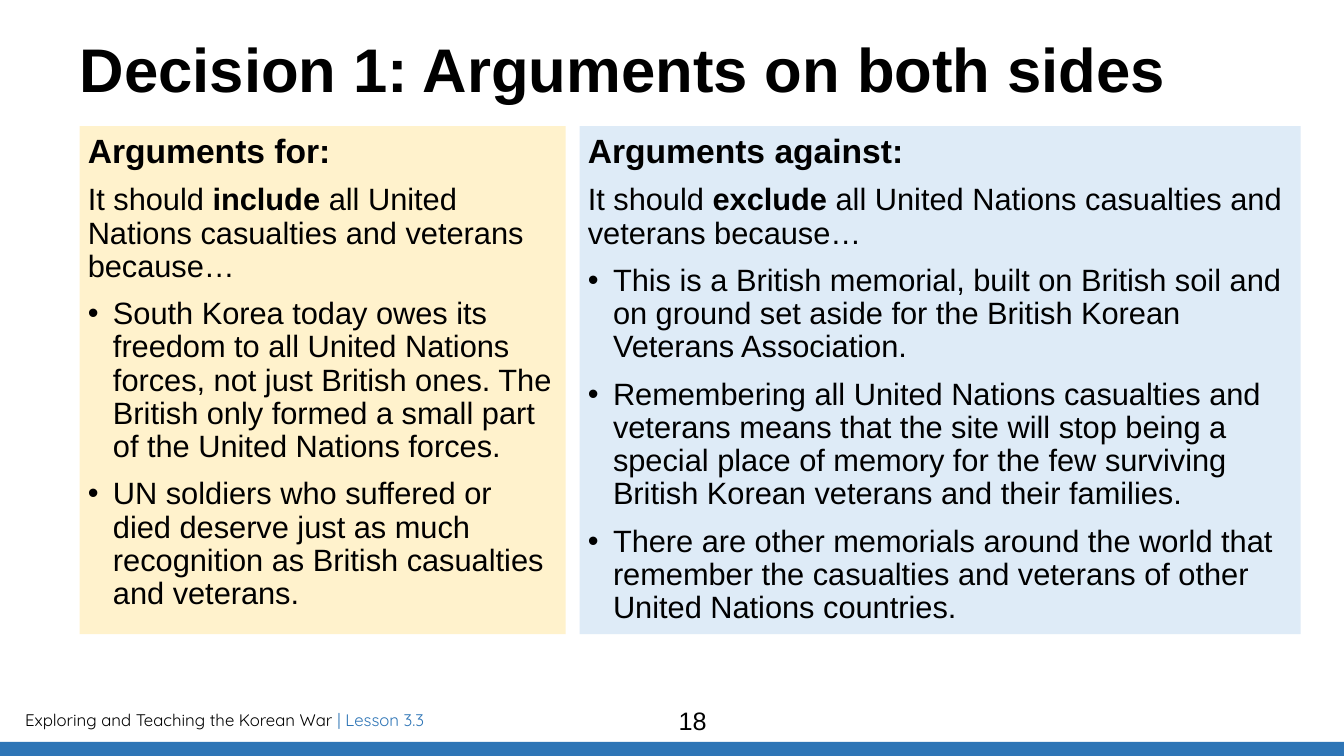
import pptx
import pptx.util
import pptx.dml.color
import pptx.enum.shapes
import pptx.enum.text
import lxml.etree
import pptx.oxml.ns

RGBColor = pptx.dml.color.RGBColor
BLACK = RGBColor(0x00, 0x00, 0x00)
BLUE = RGBColor(0x2E, 0x75, 0xB6)
CREAM = RGBColor(0xFF, 0xF2, 0xCC)
PALE_BLUE = RGBColor(0xDE, 0xEB, 0xF7)

LEFT, TOP = 5.93, 16.67
FOR_WIDTH, AGAINST_WIDTH, PANEL_HEIGHT = 36.16, 53.64, 67.2
GUTTER = 1.05


class ArgumentSlide:
    font = "Arial"
    footer_font = "Quicksand"
    heading_size, body_size = 24, 22
    inset, indent = 0.08, 0.25

    def __init__(self, deck):
        self.deck = deck
        self.slide = deck.slides.add_slide(deck.slide_layouts[5])

    def place(self, left, top, width, height):
        across, down = self.deck.slide_width / 100, self.deck.slide_height / 100
        return [round(n) for n in (left * across, top * down, width * across, height * down)]

    def style(self, run, size, color=BLACK, bold=False, font=None):
        run.font.name = font or self.font
        run.font.size = pptx.util.Pt(size)
        run.font.color.rgb = color
        run.font.bold = bold

    def title(self, text, *box):
        heading = self.slide.shapes.title
        heading.left, heading.top, heading.width, heading.height = self.place(*box)
        frame = heading.text_frame
        frame.text = text
        frame.margin_left = frame.margin_right = frame.margin_top = frame.margin_bottom = 0
        frame.vertical_anchor = pptx.enum.text.MSO_ANCHOR.TOP
        frame.auto_size = pptx.enum.text.MSO_AUTO_SIZE.NONE
        frame.word_wrap = True
        paragraph = frame.paragraphs[0]
        paragraph.alignment = pptx.enum.text.PP_ALIGN.LEFT
        paragraph.line_spacing = 0.9
        self.style(paragraph.runs[0], 44, bold=True)

    def block(self, fill, *box):
        block = self.slide.shapes.add_shape(
            pptx.enum.shapes.MSO_SHAPE.RECTANGLE, *self.place(*box))
        block.shadow.inherit = False
        block.fill.solid()
        block.fill.fore_color.rgb = fill
        block.line.fill.background()
        return block

    def fill_paragraph(self, paragraph, parts, size):
        for text, bold in parts:
            run = paragraph.add_run()
            run.text = text
            self.style(run, size, bold=bold)
        paragraph.alignment = pptx.enum.text.PP_ALIGN.LEFT
        paragraph.line_spacing = 0.9

    def bullet(self, paragraph):
        properties = paragraph._p.get_or_add_pPr()
        hang = pptx.util.Inches(self.indent)
        properties.set("marL", str(hang))
        properties.set("indent", str(-hang))
        for tag, key, value in (("a:buFont", "typeface", self.font), ("a:buChar", "char", "•")):
            lxml.etree.SubElement(properties, pptx.oxml.ns.qn(tag)).set(key, value)

    def panel(self, fill, heading, claim, reasons, *box):
        frame = self.block(fill, *box).text_frame
        frame.word_wrap = True
        frame.vertical_anchor = pptx.enum.text.MSO_ANCHOR.TOP
        frame.margin_left = frame.margin_right = pptx.util.Inches(self.inset)
        frame.margin_top = pptx.util.Inches(self.inset)
        frame.margin_bottom = 0
        self.fill_paragraph(frame.paragraphs[0], [(heading, True)], self.heading_size)
        for parts in [claim] + [[(reason, False)] for reason in reasons]:
            paragraph = frame.add_paragraph()
            if parts is not claim:
                self.bullet(paragraph)
            self.fill_paragraph(paragraph, parts, self.body_size)
            paragraph.space_before = pptx.util.Pt(10)

    def label(self, parts, size, font, alignment, *box):
        frame = self.slide.shapes.add_textbox(*self.place(*box)).text_frame
        frame.word_wrap = True
        paragraph = frame.paragraphs[0]
        paragraph.alignment = alignment
        for text, color in parts:
            run = paragraph.add_run()
            run.text = text
            self.style(run, size, color, font=font)


def main():
    deck = pptx.Presentation()
    deck.slide_width = pptx.util.Inches(13.33)
    deck.slide_height = pptx.util.Inches(7.5)
    page = ArgumentSlide(deck)
    align = pptx.enum.text.PP_ALIGN

    page.label([("Exploring and Teaching the Korean War ", BLACK), ("| Lesson 3.3", BLUE)],
               12, page.footer_font, align.LEFT, 1.13, 93.2, 58.66, 4)
    page.block(BLUE, 0, 98.13, 100, 1.87)
    page.title("Decision 1: Arguments on both sides", LEFT, 5.2, 86.27, 19.33)
    page.panel(
        CREAM, "Arguments for:",
        [("It should ", False), ("include", True),
         (" all United Nations casualties and veterans because…", False)],
        ["South Korea today owes its freedom to all United Nations forces, not just British "
         "ones. The British only formed a small part of the United Nations forces.",
         "UN soldiers who suffered or died deserve just as much recognition as British "
         "casualties and veterans."],
        LEFT, TOP, FOR_WIDTH, PANEL_HEIGHT)
    page.panel(
        PALE_BLUE, "Arguments against:",
        [("It should ", False), ("exclude ", True),
         ("all United Nations casualties and veterans because…", False)],
        ["This is a British memorial, built on British soil and on ground set aside for the "
         "British Korean Veterans Association.",
         "Remembering all United Nations casualties and veterans means that the site will stop "
         "being a special place of memory for the few surviving British Korean veterans and "
         "their families.",
         "There are other memorials around the world that remember the casualties and veterans "
         "of other United Nations countries."],
        LEFT + FOR_WIDTH + GUTTER, TOP, AGAINST_WIDTH, PANEL_HEIGHT)
    page.label([("18", BLACK)], 18, page.font, align.CENTER, 32.48, 92.67, 38.11, 5.33)
    deck.save("out.pptx")


if __name__ == "__main__":
    main()
